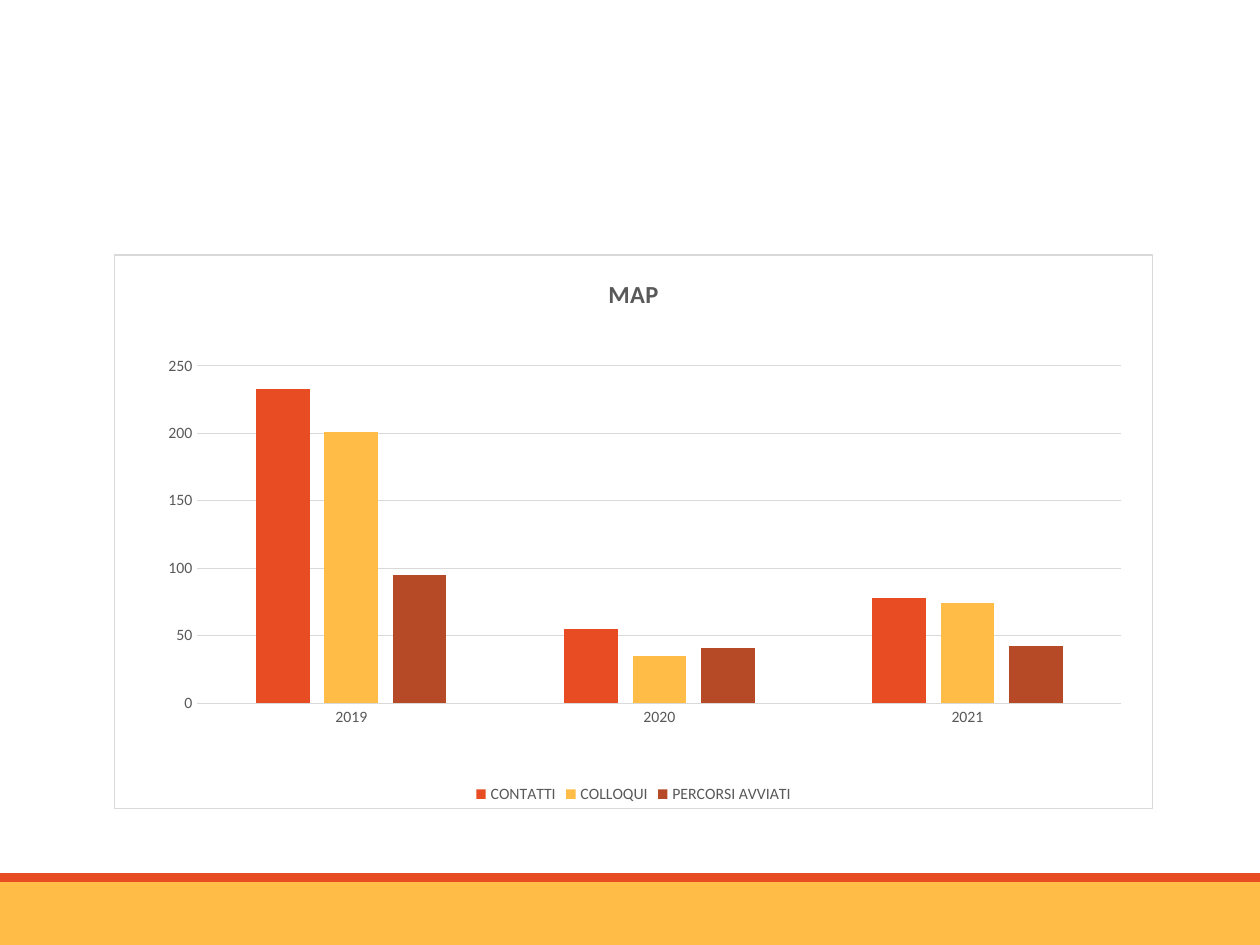
from dataclasses import dataclass

from lxml.etree import fromstring
from pptx import Presentation
from pptx.chart.data import CategoryChartData
from pptx.dml.color import RGBColor as RGB
from pptx.enum.chart import XL_CHART_TYPE as ChartType
from pptx.enum.chart import XL_LEGEND_POSITION as LegendPos
from pptx.enum.chart import XL_TICK_MARK as Tick
from pptx.enum.shapes import MSO_SHAPE as Shape
from pptx.util import Cm, Pt

NS = ('xmlns:c="http://schemas.openxmlformats.org/drawingml/2006/chart" '
      'xmlns:a="http://schemas.openxmlformats.org/drawingml/2006/main"')


@dataclass(frozen=True)
class Theme:
    font: str = "Calibri"
    paper: str = "FFFFFF"
    red: str = "E84C22"
    amber: str = "FFBD47"
    brown: str = "B64926"
    text: str = "595959"
    rule: str = "D9D9D9"
    title_size: float = 14
    base_size: float = 10
    label_size: float = 9
    rule_width: float = 0.75


@dataclass(frozen=True)
class Band:
    top: float
    height: float
    color: str


@dataclass(frozen=True)
class Series:
    name: str
    values: tuple[int, ...]
    color: str


T = Theme()
WIDTH, HEIGHT = 25.4, 19.05
BANDS = [Band(17.78, 1.27, T.amber), Band(17.6, 0.18, T.red)]
YEARS = ["2019", "2020", "2021"]
SERIES = [
    Series("CONTATTI", (233, 55, 78), T.red),
    Series("COLLOQUI", (201, 35, 74), T.amber),
    Series("PERCORSI AVVIATI", (95, 41, 42), T.brown),
]


def style_font(font, size: float = T.label_size, color: str = T.text,
               bold: bool = False) -> None:
    font.name, font.size, font.bold = T.font, Pt(size), bold
    font.color.rgb = RGB.from_string(color)


def write(tf, text: str, **fmt) -> None:
    r = tf.paragraphs[0].add_run()
    r.text = text
    style_font(r.font, **fmt)


def style_line(line, color: str = T.rule, width: float = T.rule_width) -> None:
    line.color.rgb = RGB.from_string(color)
    line.width = Pt(width)


def draw_band(s, band: Band) -> None:
    sp = s.shapes.add_shape(Shape.RECTANGLE, 0, Cm(band.top), Cm(WIDTH), Cm(band.height))
    sp.shadow.inherit = False
    sp.fill.solid()
    sp.fill.fore_color.rgb = RGB.from_string(band.color)
    sp.line.fill.background()


def frame_chart(chart) -> None:
    """Fill and outline the whole chart area."""
    chart._chartSpace.chart.addnext(fromstring(
        f'<c:spPr {NS}><a:solidFill><a:srgbClr val="{T.paper}"/></a:solidFill>'
        f'<a:ln w="{Pt(T.rule_width)}"><a:solidFill><a:srgbClr val="{T.rule}"/>'
        '</a:solidFill></a:ln></c:spPr>'))


def place_plot(chart, x: float, y: float, w: float, h: float) -> None:
    """Fix the inner plot area, in fractions of the chart."""
    area = chart._chartSpace.chart.plotArea
    for old in area.xpath("c:layout"):
        area.remove(old)
    sizes = "".join(f'<c:{k} val="{v}"/>' for k, v in zip("xywh", (x, y, w, h)))
    area.insert(0, fromstring(
        f'<c:layout {NS}><c:manualLayout><c:layoutTarget val="inner"/>'
        f'<c:xMode val="edge"/><c:yMode val="edge"/>{sizes}'
        '</c:manualLayout></c:layout>'))


def draw_chart(s, title: str, series: list[Series]) -> None:
    data = CategoryChartData()
    data.categories = YEARS
    for item in series:
        data.add_series(item.name, item.values)
    chart = s.shapes.add_chart(ChartType.COLUMN_CLUSTERED, Cm(2.29), Cm(5.13),
                               Cm(20.96), Cm(11.18), data).chart
    frame_chart(chart)
    place_plot(chart, 0.08, 0.2, 0.89, 0.61)
    style_font(chart.font, size=T.base_size, color="000000")

    # Title and legend
    chart.has_title = True
    write(chart.chart_title.text_frame, title, size=T.title_size, bold=True)
    chart.chart_title.include_in_layout = False
    chart.has_legend = True
    chart.legend.position = LegendPos.BOTTOM
    chart.legend.include_in_layout = False
    style_font(chart.legend.font)

    # Columns
    plot = chart.plots[0]
    plot.vary_by_categories = False
    plot.gap_width, plot.overlap = 219, -27
    for bar, item in zip(plot.series, series):
        bar.format.fill.solid()
        bar.format.fill.fore_color.rgb = RGB.from_string(item.color)

    # Axes
    years, counts = chart.category_axis, chart.value_axis
    for axis in (years, counts):
        axis.major_tick_mark = axis.minor_tick_mark = Tick.NONE
        style_font(axis.tick_labels.font)
    style_line(years.format.line)
    counts.format.line.fill.background()
    counts.minimum_scale, counts.maximum_scale, counts.major_unit = 0, 250, 50
    style_line(counts.major_gridlines.format.line)


def main() -> None:
    prs = Presentation()
    prs.slide_width, prs.slide_height = Cm(WIDTH), Cm(HEIGHT)
    s = prs.slides.add_slide(prs.slide_layouts[6])
    for band in BANDS:
        draw_band(s, band)
    draw_chart(s, "MAP", SERIES)
    prs.save("out.pptx")


if __name__ == "__main__":
    main()
